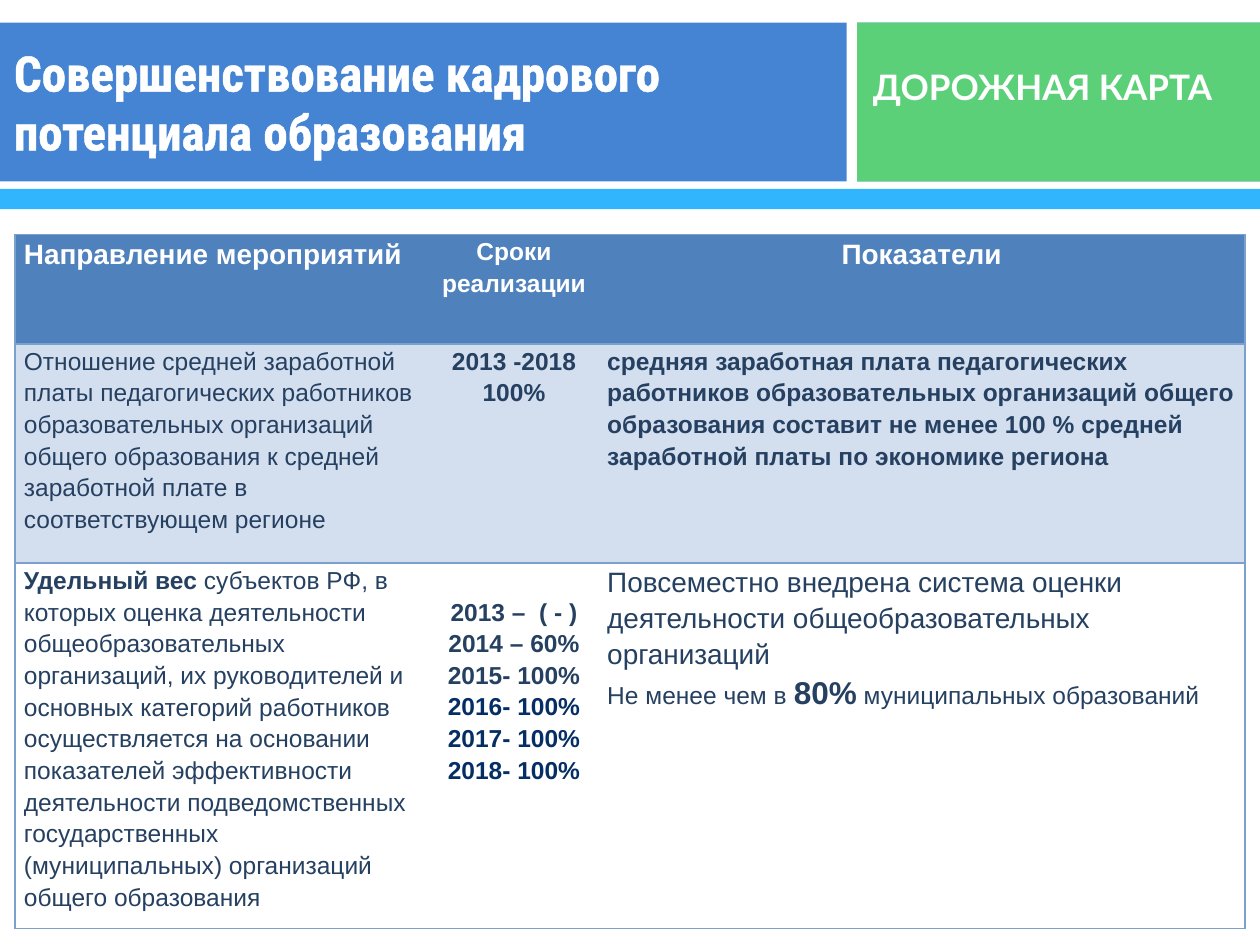
from lxml import etree
from pptx import Presentation
from pptx.dml.color import RGBColor
from pptx.enum.shapes import MSO_SHAPE as SHAPE
from pptx.enum.text import MSO_ANCHOR as ANCHOR, MSO_AUTO_SIZE as AUTO_SIZE, PP_ALIGN as ALIGN
from pptx.oxml import parse_xml
from pptx.oxml.ns import nsdecls, qn
from pptx.util import Inches, Pt

WHITE = RGBColor(0xFF, 0xFF, 0xFF)
BLUE = RGBColor(0x45, 0x84, 0xD3)
SKY = RGBColor(0x31, 0xB6, 0xFD)
GREEN = RGBColor(0x5B, 0xD0, 0x78)
HEADER_FILL = RGBColor(0x4F, 0x81, 0xBD)
BAND_FILL = RGBColor(0xD3, 0xDF, 0xEE)
BORDER = RGBColor(0x7B, 0xA0, 0xCD)
INK = RGBColor(0x25, 0x40, 0x61)
NAVY = RGBColor(0x05, 0x2E, 0x65)
PLAIN_TABLE = "{2D5ABB26-0587-4C30-8999-92F81FD0307C}"

HEAD = {"size": Pt(16), "bold": True, "color": WHITE}
SMALL_HEAD = HEAD | {"size": Pt(14)}
BODY = {"size": Pt(14), "bold": False, "color": INK}
STRONG = BODY | {"bold": True}
LATER = STRONG | {"color": NAVY}
LARGE = BODY | {"size": Pt(16)}
FIGURE = STRONG | {"size": Pt(18)}

# Each cell is a list of paragraphs, each paragraph a list of (text, format)
ROWS = [
    [
        [[("Направление мероприятий", HEAD)]],
        [[("Сроки реализации", SMALL_HEAD)]],
        [[("Показатели", HEAD)]],
    ],
    [
        [[("Отношение средней заработной платы педагогических работников "
           "образовательных организаций общего образования к средней "
           "заработной плате в", BODY)],
         [("соответствующем регионе", BODY)]],
        [[("2013 -2018", STRONG)], [("100%", STRONG)]],
        [[("средняя заработная плата педагогических работников "
           "образовательных организаций общего образования составит не менее "
           "100 % средней заработной платы по экономике региона", STRONG)]],
    ],
    [
        [[("Удельный вес ", STRONG),
          ("субъектов РФ, в которых оценка деятельности общеобразовательных "
           "организаций, их руководителей и основных категорий работников "
           "осуществляется на основании показателей эффективности деятельности "
           "подведомственных государственных (муниципальных) организаций "
           "общего образования", BODY)]],
        [[("2013 –  ( - )", STRONG)], [("2014 – 60%", STRONG)], [("2015- 100%", STRONG)],
         [("2016- 100%", LATER)], [("2017- 100%", LATER)], [("2018- 100%", LATER)]],
        [[("Повсеместно внедрена система оценки деятельности "
           "общеобразовательных организаций", LARGE)],
         [("Не менее чем в ", BODY), ("80%", FIGURE),
          (" муниципальных образований", BODY)]],
    ],
]


def add_run(paragraph, text, style, typeface="Arial"):
    run = paragraph.add_run()
    run.text = text
    run.font.name = typeface
    for key, value in style.items():
        if key == "color":
            run.font.color.rgb = value
        else:
            setattr(run.font, key, value)
    return run


def add_bands(slide, title):
    """Coloured bands, kept behind the title."""
    for left, top, width, height, color in [
        (0, 0.18, 10, 1.26, BLUE),
        (0, 1.5, 10, 0.16, SKY),
        (6.75, 0.18, 3.25, 1.26, GREEN),
        (6.72, 0.15, 0.08, 1.33, WHITE),
    ]:
        band = slide.shapes.add_shape(
            SHAPE.RECTANGLE, Inches(left), Inches(top), Inches(width), Inches(height))
        band.shadow.inherit = False
        band.fill.solid()
        band.fill.fore_color.rgb = color
        band.line.fill.background()
        title.element.addprevious(band.element)


def format_label(label, box, text, style, typeface, bottom=0.05):
    """Place a header label in its box and give it one line of text."""
    label.left, label.top, label.width, label.height = map(Inches, box)
    frame = label.text_frame
    for key, value in {"word_wrap": True, "auto_size": AUTO_SIZE.NONE,
                       "vertical_anchor": ANCHOR.MIDDLE,
                       "margin_bottom": Inches(bottom)}.items():
        setattr(frame, key, value)
    paragraph = frame.paragraphs[0]
    paragraph.alignment = ALIGN.LEFT
    return add_run(paragraph, text, style, typeface)


def add_header(slide):
    title = slide.shapes.title
    add_bands(slide, title)
    heading = format_label(
        title, (0.01, 0.29, 6.6, 1.03),
        "Совершенствование кадрового потенциала образования",
        HEAD | {"size": Pt(28)}, "Roboto Condensed")
    # White text outline
    heading.font.fill  # the outline precedes the fill in the run properties
    heading.font._element.insert(0, parse_xml(
        f'<a:ln {nsdecls("a")} w="{Pt(1.1)}"><a:solidFill>'
        f'<a:srgbClr val="{WHITE}"/></a:solidFill></a:ln>'))
    road_map = slide.shapes.add_textbox(0, 0, 0, 0)
    format_label(road_map, (6.83, 0.3, 3, 1.03), "ДОРОЖНАЯ КАРТА",
                 HEAD | {"size": Pt(20)}, "Lato", bottom=0.3)


def set_borders(cell, sides):
    properties = cell._tc.get_or_add_tcPr()
    for position, side in enumerate(sides):
        line = etree.Element(qn(f"a:ln{side}"), w=str(Pt(1)))
        fill = etree.SubElement(line, qn("a:solidFill"))
        etree.SubElement(fill, qn("a:srgbClr"), val=str(BORDER))
        properties.insert(position, line)


def fill_cell(cell, paragraphs, alignment):
    cell.margin_left = cell.margin_right = Inches(0.07)
    cell.margin_top = cell.margin_bottom = 0
    frame = cell.text_frame
    for index, runs in enumerate(paragraphs):
        paragraph = frame.add_paragraph() if index else frame.paragraphs[0]
        paragraph.alignment = alignment
        paragraph.line_spacing = 1.15
        for text, style in runs:
            add_run(paragraph, text, style)


def add_measures_table(slide, box):
    table = slide.shapes.add_table(3, 3, *map(Inches, box)).table
    table.first_row = table.horz_banding = False
    table._tbl.tblPr.find(qn("a:tableStyleId")).text = PLAIN_TABLE
    for column, width in zip(table.columns, (3.29, 1.34, 5.13)):
        column.width = Inches(width)
    for row, height in zip(table.rows, (0.87, 1.74, 2.9)):
        row.height = Inches(height)

    for r, (contents, fill) in enumerate(zip(ROWS, (HEADER_FILL, BAND_FILL, None))):
        for c, paragraphs in enumerate(contents):
            cell = table.cell(r, c)
            centred = c == 1 or (r == 0 and c == 2)
            fill_cell(cell, paragraphs, ALIGN.CENTER if centred else ALIGN.LEFT)
            if fill is None:
                cell.fill.background()
            else:
                cell.fill.solid()
                cell.fill.fore_color.rgb = fill
            set_borders(cell, ("LTB", "TB", "RTB")[c])
    # The yearly targets start one line lower
    table.cell(2, 1).margin_top = Inches(0.25)


def main():
    deck = Presentation()
    deck.slide_width, deck.slide_height = Inches(10), Inches(7.5)
    slide = deck.slides.add_slide(deck.slide_layouts[5])
    add_header(slide)
    add_measures_table(slide, (0.12, 1.86, 9.76, 5.51))
    deck.save("out.pptx")


if __name__ == "__main__":
    main()
